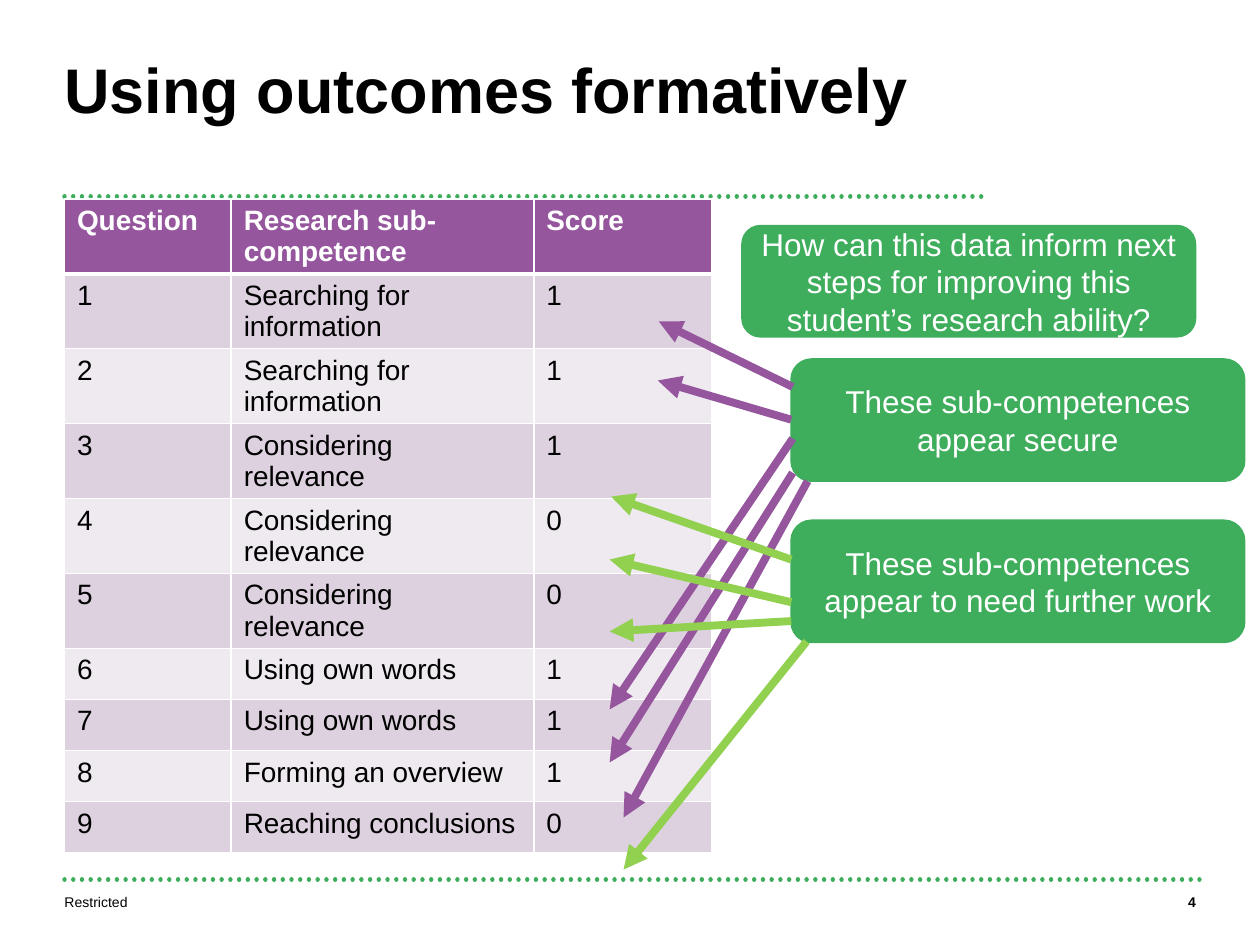
"""Build a slide that links a score table to next steps for a student."""
from lxml import etree
from pptx import Presentation
from pptx import util as u
from pptx.dml.color import RGBColor
from pptx.enum import dml, shapes, text
from pptx.oxml import ns

colour = RGBColor.from_string
GREEN, PURPLE, LIME = "3EAD5C", "95569E", "92D050"
WHITE, BLACK = "FFFFFF", "000000"
BANDS = ["EFE9F0", "DDD1DF"]


def write(frame, words, size, ink, bold=False, align=text.PP_ALIGN.LEFT):
    frame.text = words
    frame.word_wrap = True
    para = frame.paragraphs[0]
    para.alignment = align
    font = para.runs[0].font
    font.name, font.size, font.bold = "Arial", u.Pt(size), bold
    font.color.rgb = colour(ink)
    return para


def draw_line(points, ink, width):
    line = page.shapes.add_connector(
        shapes.MSO_CONNECTOR.STRAIGHT, *[u.Cm(value) for value in points])
    line.line.color.rgb = colour(ink)
    line.line.width = u.Pt(width)
    properties = line._element.spPr
    etree.SubElement(properties, ns.qn("a:effectLst"))
    return line, properties.find(ns.qn("a:ln"))


deck = Presentation()
deck.slide_width, deck.slide_height = u.Cm(25.4), u.Cm(19.05)
page = deck.slides.add_slide(deck.slide_layouts[6])

for right, top in [(24.21, 17.73), (19.81, 3.96)]:
    divider, stroke = draw_line((1.3, top, right, top), GREEN, 2.5)
    divider.line.dash_style = dml.MSO_LINE.ROUND_DOT
    stroke.set("cap", "rnd")

labels = [
    ("Using outcomes formatively", (1.3, 1.3, 18.52, 2.49), 36, True, text.PP_ALIGN.LEFT),
    ("Restricted", (1.3, 18.01, 15.24, 0.71), 8, False, text.PP_ALIGN.LEFT),
    ("4", (22.71, 18.01, 1.4, 0.71), 8, True, text.PP_ALIGN.RIGHT),
]
for words, place, size, bold, align in labels:
    label = page.shapes.add_textbox(*[u.Cm(value) for value in place])
    frame = label.text_frame
    frame.margin_left = frame.margin_right = frame.margin_top = frame.margin_bottom = 0
    para = write(frame, words, size, BLACK, bold, align)
    if size == 36:
        para.line_spacing = u.Pt(35)

results = [
    ("Question", "Research sub-competence", "Score"),
    ("1", "Searching for information", "1"),
    ("2", "Searching for information", "1"),
    ("3", "Considering relevance", "1"),
    ("4", "Considering relevance", "0"),
    ("5", "Considering relevance", "0"),
    ("6", "Using own words", "1"),
    ("7", "Using own words", "1"),
    ("8", "Forming an overview", "1"),
    ("9", "Reaching conclusions", "0"),
]
widths = [3.36, 6.1, 3.59]
heights = [1.51] * 6 + [1.03] * 4
table = page.shapes.add_table(
    len(results), len(widths), u.Cm(1.3), u.Cm(4.01),
    u.Cm(sum(widths)), u.Cm(sum(heights))).table
for column, width in zip(table.columns, widths):
    column.width = u.Cm(width)
for number, (result, height) in enumerate(zip(results, heights)):
    table.rows[number].height = u.Cm(height)
    header = number == 0
    for cell, words in zip(table.rows[number].cells, result):
        cell.margin_bottom = 0
        write(cell.text_frame, words, 16, WHITE if header else BLACK, header)
        properties = cell._tc.get_or_add_tcPr()
        for side in ("lnL", "lnR", "lnT", "lnB"):
            thick = (header and side == "lnB") or (number == 1 and side == "lnT")
            border = etree.SubElement(
                properties, ns.qn(f"a:{side}"), w=str(u.Pt(3 if thick else 1)))
            paint = etree.SubElement(border, ns.qn("a:solidFill"))
            etree.SubElement(paint, ns.qn("a:srgbClr"), val=WHITE)
        cell.fill.solid()
        cell.fill.fore_color.rgb = colour(PURPLE if header else BANDS[number % 2])

callouts = [
    ("How can this data inform next steps for improving this student’s research ability?",
     14.96, 4.55, 2.24),
    ("These sub-competences appear secure", 15.95, 7.24, 2.46),
    ("These sub-competences appear to need further work", 15.95, 10.49, 2.46),
]
for words, left, top, height in callouts:
    box = page.shapes.add_shape(
        shapes.MSO_SHAPE.ROUNDED_RECTANGLE, u.Cm(left), u.Cm(top), u.Cm(9.14), u.Cm(height))
    box.shadow.inherit = False
    box.fill.solid()
    box.fill.fore_color.rgb = box.line.color.rgb = colour(GREEN)
    box.line.width = u.Pt(1)
    box.text_frame.vertical_anchor = text.MSO_ANCHOR.MIDDLE
    write(box.text_frame, words, 18, WHITE, align=text.PP_ALIGN.CENTER)

arrows = {
    PURPLE: [
        (15.98, 7.8, 13.28, 6.48),
        (15.95, 8.46, 13.26, 7.67),
        (15.98, 8.84, 12.29, 14.3),
        (15.98, 9.53, 12.29, 15.37),
        (16.28, 9.7, 12.57, 16.48),
    ],
    LIME: [
        (16.26, 12.93, 12.57, 17.53),
        (15.95, 12.52, 12.29, 12.73),
        (15.95, 12.14, 12.29, 11.28),
        (15.95, 11.28, 12.32, 10.01),
    ],
}
for ink, group in arrows.items():
    for points in group:
        arrow, stroke = draw_line(points, ink, 4.5)
        etree.SubElement(stroke, ns.qn("a:tailEnd"), type="triangle")

deck.save("out.pptx")
